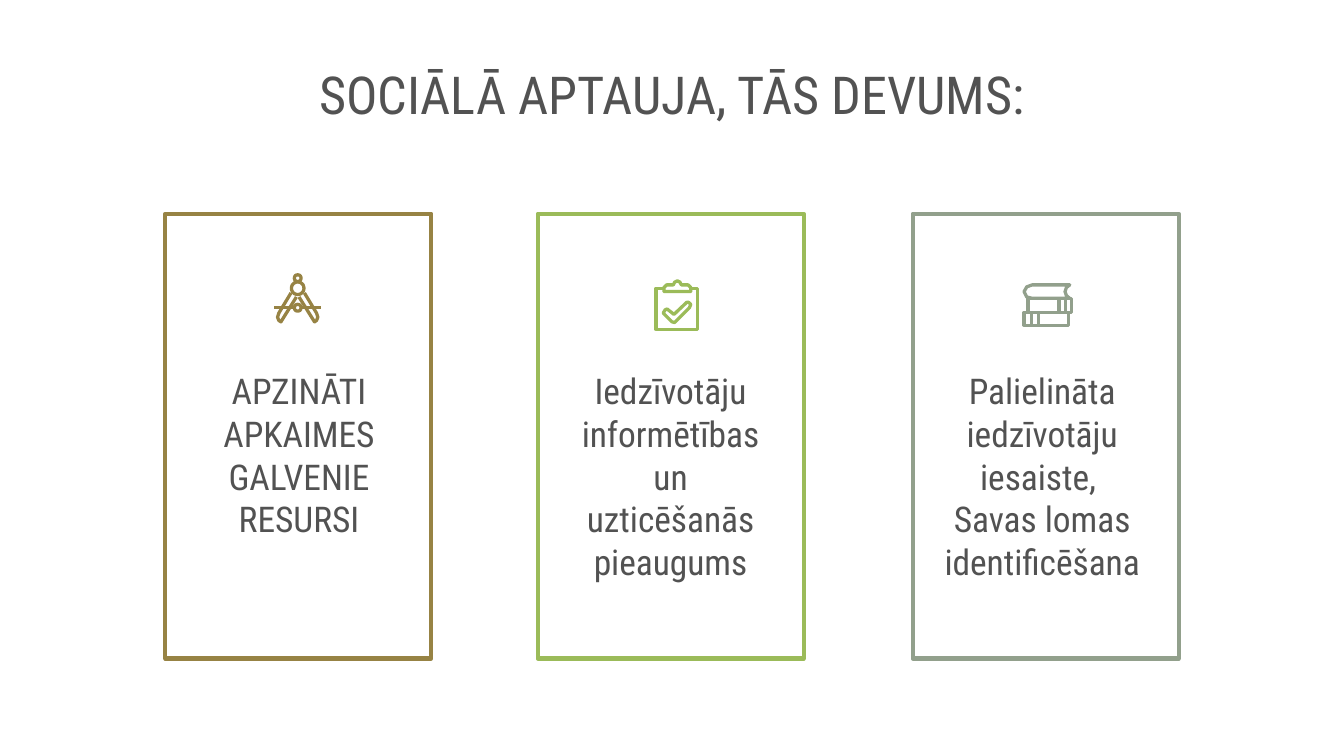
from dataclasses import dataclass
from math import cos, pi, sin

from pptx import Presentation
from pptx.dml.color import RGBColor
from pptx.enum.shapes import MSO_SHAPE
from pptx.enum.text import MSO_ANCHOR, MSO_AUTO_SIZE, PP_ALIGN
from pptx.util import Inches, Pt


@dataclass(frozen=True)
class Theme:
    font: str = "Roboto Condensed"
    ink: str = "525252"
    bronze: str = "978344"
    green: str = "9BBB59"
    sage: str = "92A08C"
    title_size: float = 28
    body_size: float = 19
    frame_width: float = 2.25
    icon_stroke: float = 1.75


THEME = Theme()

# Card grid, in inches; the slide is 16:9
SLIDE_W = 10
SLIDE_H = SLIDE_W * 9 / 16
CARD_TOP, CARD_W, CARD_H = 1.59, 1.98, 3.31
CAPTION_TOP, CAPTION_H = 2.74, 1.1
ICON_TOP = 2.0


# Icon outlines, in hundredths of an inch from the icon's corner
def circle(x, y, radius, steps=24):
    return [(x + radius * cos(2 * pi * i / steps), y + radius * sin(2 * pi * i / steps))
            for i in range(steps + 1)]


def box(left, top, right, bottom):
    return [(left, top), (right, top), (right, bottom), (left, bottom), (left, top)]


def compasses():
    axis = 18.5
    leg = [(-5, 18), (-14, 33), (-15, 36), (-14, 38.5), (-12.5, 39.5), (-1, 21)]
    legs = [[(axis + side * x, y) for x, y in leg] for side in (1, -1)]
    return [circle(axis, 7, 2.5), circle(axis, 14.5, 4.7), circle(axis, 29, 2.5),
            [(1, 29), (16, 29)], [(21, 29), (36, 29)], *legs]


def clipboard():
    board = [(13, 14.5), (7, 14.5), (7, 45), (38, 45), (38, 14.5), (32, 14.5)]
    clip = [(13, 17), (33, 17), (33, 14), (31, 12), (26, 12), (25, 10), (23, 9),
            (21, 10), (20, 12), (15, 12), (13, 14), (13, 17)]
    check = [(30, 25), (20.5, 34), (15.5, 30), (14, 30.5), (12.5, 33), (19, 39.5),
             (21, 40), (32, 29), (33, 26.5), (31.5, 25), (30, 25)]
    return [board, clip, check]


def books():
    top_book = [(36, 12), (8, 12), (4, 13.5), (2, 17), (4, 21), (8, 22), (36, 22),
                (33.5, 20), (32.5, 17), (33.5, 14), (36, 12)]
    spines = [[(x, 22), (x, 32.5)] for x in (28, 33)]
    spines += [[(x, 32.5), (x, 42)] for x in (7.5, 12.5)]
    return [top_book, box(5, 22, 37.5, 32.5), box(2, 32.5, 35, 42), *spines]


@dataclass(frozen=True)
class Card:
    left: float
    icon_left: float
    caption_left: float
    caption_width: float
    color: str
    icon: list
    lines: list


CARDS = [
    Card(1.23, 2.03, 1.49, 1.47, THEME.bronze, compasses(),
         ["APZINĀTI APKAIMES GALVENIE RESURSI"]),
    Card(4, 4.81, 4.21, 1.56, THEME.green, clipboard(),
         ["Iedzīvotāju informētības un uzticēšanās pieaugums"]),
    Card(6.79, 7.6, 7.02, 1.47, THEME.sage, books(),
         ["Palielināta iedzīvotāju iesaiste, ", "Savas lomas identificēšana"]),
]


def outline(shape, color, width):
    shape.fill.background()
    shape.line.color.rgb = RGBColor.from_string(color)
    shape.line.width = Pt(width)
    shape.shadow.inherit = False


def write(frame, lines, size, margin_top=0):
    frame.word_wrap = True
    frame.auto_size = MSO_AUTO_SIZE.NONE
    frame.vertical_anchor = MSO_ANCHOR.TOP
    frame.margin_left = frame.margin_right = frame.margin_bottom = 0
    frame.margin_top = Inches(margin_top)
    frame.text = "\n".join(lines)
    for paragraph in frame.paragraphs:
        paragraph.alignment = PP_ALIGN.CENTER
        paragraph.font.name = THEME.font
        paragraph.font.size = Pt(size)
        paragraph.font.color.rgb = RGBColor.from_string(THEME.ink)


def add_title(slide, text):
    title = slide.shapes.title
    title.left, title.top = Inches(1.77), Inches(0.45)
    title.width, title.height = Inches(6.46), Inches(1.14)
    write(title.text_frame, [text], THEME.title_size, margin_top=0.01)


def add_icon(slide, left, strokes, color):
    units = 10  # whole thousandths of an inch
    scaled = [[(round(x * units), round(y * units)) for x, y in stroke] for stroke in strokes]
    builder = slide.shapes.build_freeform(*scaled[0][0], scale=Inches(1) / 1000)
    for number, (start, *rest) in enumerate(scaled):
        if number:
            builder.move_to(*start)
        builder.add_line_segments(rest, close=False)
    icon = builder.convert_to_shape(Inches(left), Inches(ICON_TOP))
    outline(icon, color, THEME.icon_stroke)


def add_card(slide, card):
    frame = slide.shapes.add_shape(MSO_SHAPE.RECTANGLE, Inches(card.left), Inches(CARD_TOP),
                                   Inches(CARD_W), Inches(CARD_H))
    outline(frame, card.color, THEME.frame_width)
    add_icon(slide, card.icon_left, card.icon, card.color)
    caption = slide.shapes.add_textbox(Inches(card.caption_left), Inches(CAPTION_TOP),
                                       Inches(card.caption_width), Inches(CAPTION_H))
    write(caption.text_frame, card.lines, THEME.body_size, margin_top=0.01)


def main():
    deck = Presentation()
    deck.slide_width, deck.slide_height = Inches(SLIDE_W), Inches(SLIDE_H)
    slide = deck.slides.add_slide(deck.slide_layouts[5])
    add_title(slide, "SOCIĀLĀ APTAUJA, TĀS DEVUMS:")
    for card in CARDS:
        add_card(slide, card)
    deck.save("out.pptx")


if __name__ == "__main__":
    main()
